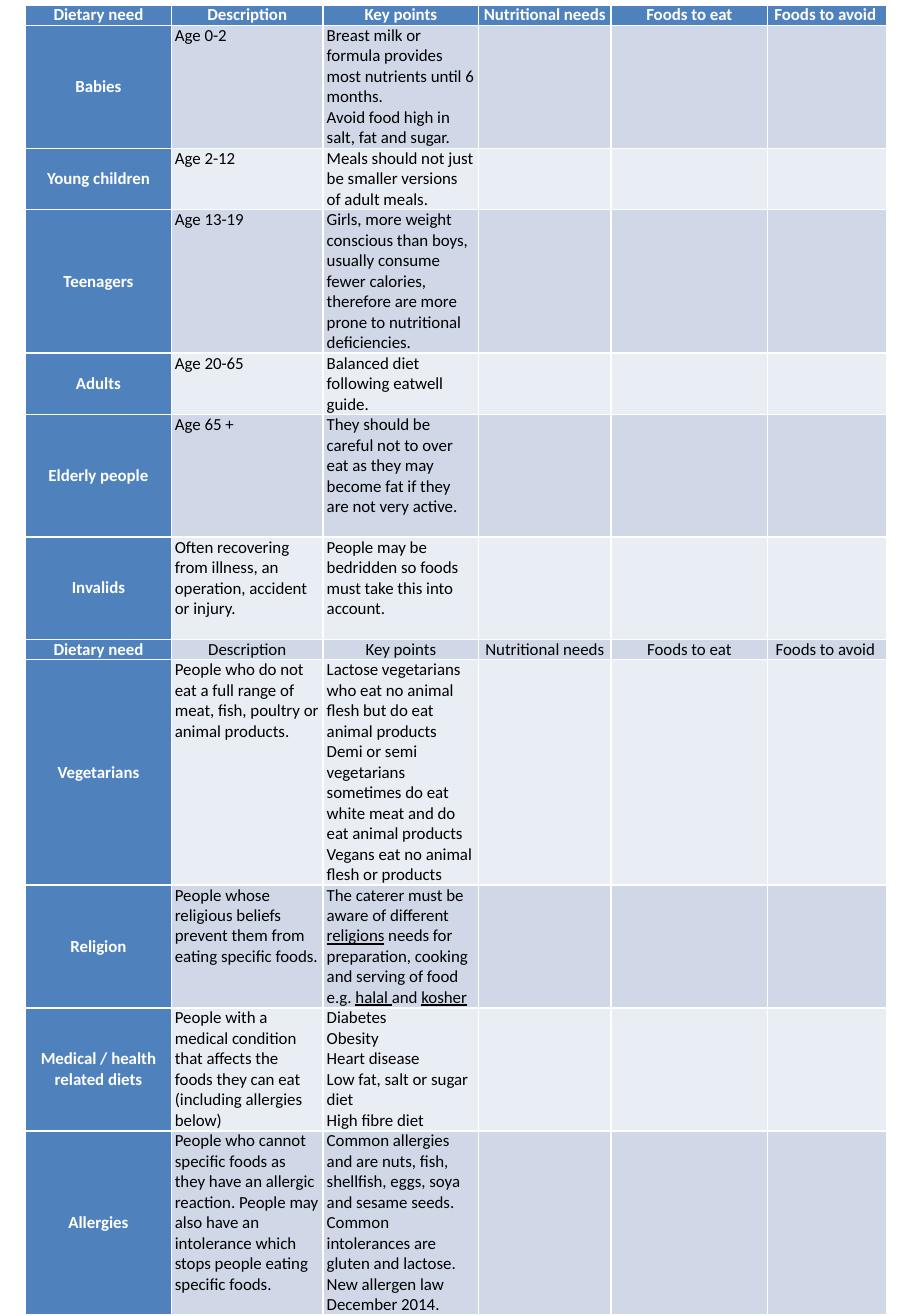
from pptx import Presentation
from pptx.dml.color import RGBColor
from pptx.enum.text import MSO_ANCHOR, PP_ALIGN
from pptx.util import Inches, Pt

# Content: (height in text lines, cell texts); a tuple holds paragraphs, _ marks underlining
HEADINGS = ("Dietary need", "Description", "Key points",
            "Nutritional needs", "Foods to eat", "Foods to avoid ")
ROWS = [
    (1, HEADINGS),
    (6, ("Babies", "Age 0-2",
         ("Breast milk or formula provides most nutrients until 6 months.",
          "Avoid food high in salt, fat and sugar."))),
    (3, ("Young children", "Age 2-12",
         "Meals should not just be smaller versions of adult meals.")),
    (7, ("Teenagers", "Age 13-19",
         "Girls, more weight conscious than boys, usually consume fewer calories, "
         "therefore are more prone to nutritional deficiencies.")),
    (3, ("Adults", "Age 20-65", "Balanced diet following eatwell guide.")),
    (6, ("Elderly people", "Age 65 +",
         "They should be careful not to over eat as they may become fat "
         "if they are not very active.")),
    (5, ("Invalids", "Often recovering from illness, an operation, accident or injury.",
         "People may be bedridden so foods must take this into account.")),
    (1, HEADINGS),
    (11, ("Vegetarians",
          "People who do not eat a full range of meat, fish, poultry or animal products.",
          "Lactose vegetarians who eat no animal flesh but do eat animal products "
          "Demi or semi vegetarians sometimes do eat white meat and do eat animal products "
          "Vegans eat no animal flesh or products")),
    (6, ("Religion", "People whose religious beliefs prevent them from eating specific foods.",
         "The caterer must be aware of different _religions_ needs for preparation, "
         "cooking and serving of food e.g. _halal _and _kosher")),
    (6, ("Medical / health related diets",
         "People with a medical condition that affects the foods they can eat "
         "(including allergies below)",
         ("Diabetes", "Obesity", "Heart disease", "Low fat, salt or sugar diet",
          "High fibre diet"))),
    (9, ("Allergies",
         "People who cannot specific foods as they have an allergic reaction. "
         "People may also have an intolerance which stops people eating specific foods.",
         ("Common allergies and are nuts, fish, shellfish, eggs, soya and sesame seeds.",
          "Common intolerances are gluten and lactose.",
          "New allergen law December 2014."))),
]

# Formats
COLUMN_WIDTHS = (1.2, 1.25, 1.28, 1.09, 1.29, 0.98)
LINE = Pt(12.1)
BLUE = RGBColor(0x4F, 0x81, 0xBD)
BANDS = (RGBColor(0xE9, 0xED, 0xF4), RGBColor(0xD0, 0xD8, 0xE8))
WHITE = RGBColor(0xFF, 0xFF, 0xFF)
BLACK = RGBColor(0, 0, 0)
MARGINS = {"margin_left": Inches(0.03), "margin_right": Inches(0.03),
           "margin_top": 0, "margin_bottom": 0}


def set_all(target, values):
    for name, value in values.items():
        setattr(target, name, value)


def write_cell(cell, content, emphasis, centred):
    set_all(cell, MARGINS)
    cell.vertical_anchor = MSO_ANCHOR.MIDDLE if centred else MSO_ANCHOR.TOP
    paragraphs = (content,) if isinstance(content, str) else content
    for number, text in enumerate(paragraphs):
        frame = cell.text_frame
        para = frame.add_paragraph() if number else frame.paragraphs[0]
        para.alignment = PP_ALIGN.CENTER if centred else PP_ALIGN.LEFT
        for part, words in enumerate(text.split("_")):
            span = para.add_run()
            span.text = words
            set_all(span.font, {"name": "Calibri", "size": Pt(10), "bold": emphasis,
                                "underline": part % 2 == 1})
            span.font.color.rgb = WHITE if emphasis else BLACK


def main():
    deck = Presentation()
    set_all(deck, {"slide_width": Inches(7.5), "slide_height": Inches(10.83)})
    page = deck.slides.add_slide(deck.slide_layouts[6])

    # Table grid: each row is a whole number of text lines
    total_lines = sum(lines for lines, _ in ROWS)
    table = page.shapes.add_table(
        len(ROWS), len(COLUMN_WIDTHS), Inches(0.21), Inches(0.04),
        Inches(sum(COLUMN_WIDTHS)), total_lines * LINE).table
    set_all(table, {"first_row": True, "first_col": True, "horz_banding": True})
    for column, width in zip(table.columns, COLUMN_WIDTHS):
        column.width = Inches(width)

    # Cells: blue first row and column, banded body
    for row_number, (lines, texts) in enumerate(ROWS):
        table.rows[row_number].height = lines * LINE
        for column_number in range(len(COLUMN_WIDTHS)):
            cell = table.cell(row_number, column_number)
            emphasis = row_number == 0 or column_number == 0
            cell.fill.solid()
            cell.fill.fore_color.rgb = BLUE if emphasis else BANDS[row_number % 2]
            if column_number < len(texts):
                centred = texts is HEADINGS or column_number == 0
                write_cell(cell, texts[column_number], emphasis, centred)

    deck.save("out.pptx")


if __name__ == "__main__":
    main()
